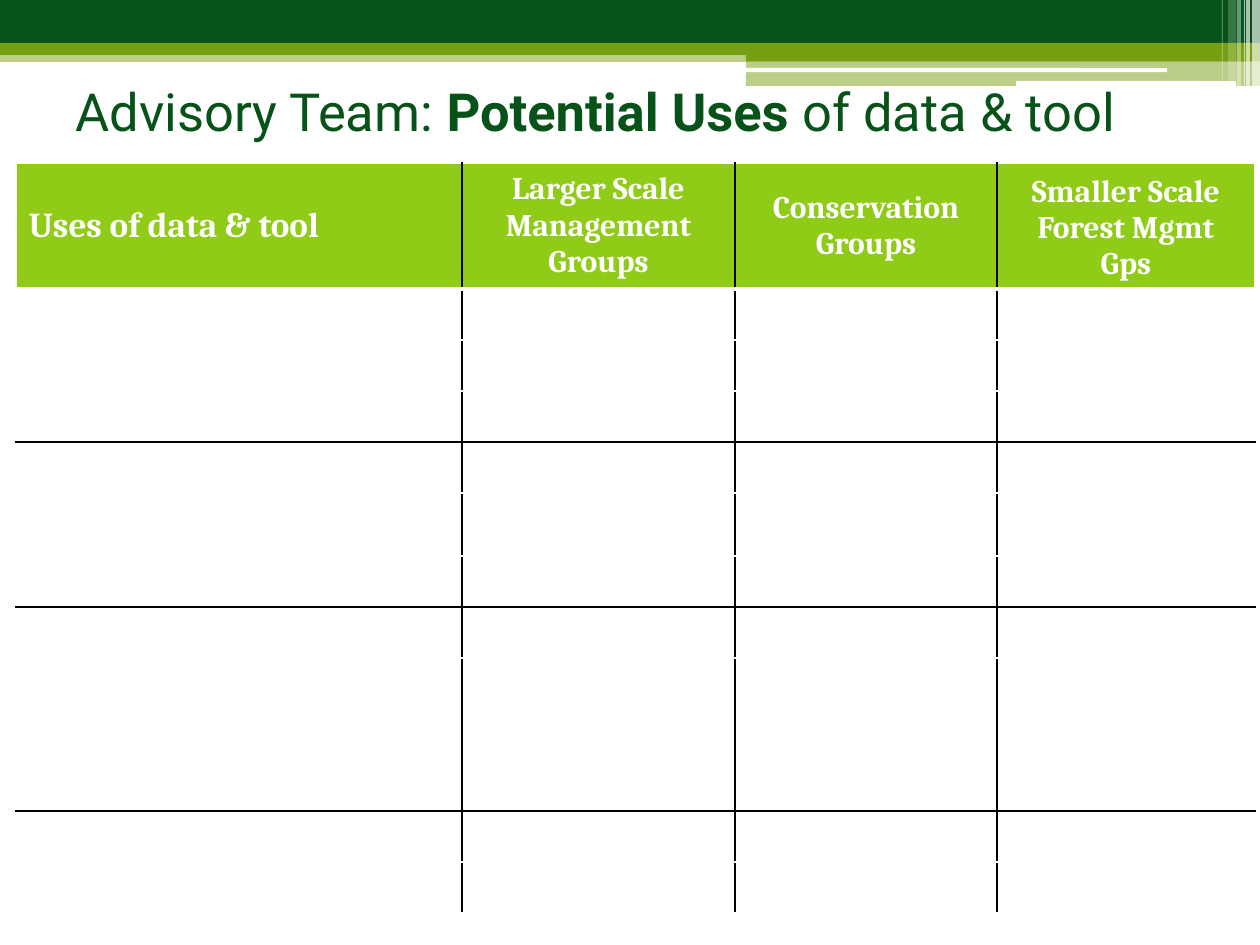
from dataclasses import dataclass
from typing import Optional

import lxml.etree
import pptx
import pptx.dml.color
import pptx.enum.shapes
import pptx.enum.text
import pptx.oxml.ns
import pptx.util

EMU_PER_PX = 914400 / 126
RECT = pptx.enum.shapes.MSO_SHAPE.RECTANGLE
ROUNDED = pptx.enum.shapes.MSO_SHAPE.ROUNDED_RECTANGLE
ALIGN = pptx.enum.text.PP_ALIGN
ANCHOR = pptx.enum.text.MSO_ANCHOR


@dataclass(frozen=True)
class Theme:
    forest: str = "065218"
    olive: str = "769F11"
    lime: str = "8FCB17"
    white: str = "FFFFFF"
    black: str = "000000"
    title_font: str = "Roboto"
    table_font: str = "Cambria"
    title_size: int = 30
    first_heading_size: int = 20
    heading_size: int = 18
    rule: int = 1
    heading_rule: int = 3


@dataclass(frozen=True)
class Band:
    left: int
    top: int
    width: int
    height: int
    color: str
    opacity: int = 100
    preset: pptx.enum.shapes.MSO_SHAPE = RECT


@dataclass(frozen=True)
class Column:
    heading: str
    width: int
    size: int
    align: ALIGN = ALIGN.CENTER
    anchor: ANCHOR = ANCHOR.MIDDLE


@dataclass(frozen=True)
class Rule:
    color: str
    width: int


THEME = Theme()
BANDS = [
    Band(0, 50, 1260, 12, THEME.olive, 50),
    Band(0, 0, 1260, 43, THEME.forest),
    Band(0, 43, 1260, 12, THEME.olive),
    Band(746, 49, 514, 12, THEME.olive),
    Band(746, 61, 514, 25, THEME.olive, 50),
    Band(745, 68, 422, 4, THEME.white, preset=ROUNDED),
    Band(1016, 81, 220, 5, THEME.white, preset=ROUNDED),
    Band(1252, 0, 8, 86, THEME.white, 65),
    Band(1246, 0, 4, 86, THEME.white, 65),
    Band(1244, 0, 1, 86, THEME.white, 60),
    Band(1237, 0, 4, 86, THEME.white, 40),
    Band(1228, 0, 8, 81, THEME.white, 20),
    Band(1222, 0, 1, 81, THEME.white, 30),
]
COLUMNS = [
    Column("Uses of data & tool", 446, THEME.first_heading_size, ALIGN.LEFT),
    Column("Larger Scale Management Groups", 273, THEME.heading_size),
    Column("Conservation Groups", 262, THEME.heading_size),
    Column("Smaller Scale Forest Mgmt Gps", 258, THEME.heading_size, anchor=ANCHOR.BOTTOM),
]
ROW_HEIGHTS = [118] + [51] * 4 + [63] + [51] * 7
GROUP_ENDS = {3, 6, 10}
UNRULED_ROWS = {8, 9}
TITLE = [("Advisory Team: ", False), ("Potential Uses ", True), ("of data & tool", False)]


def px(length: int) -> pptx.util.Emu:
    return pptx.util.Emu(round(length * EMU_PER_PX))


def rgb(color: str) -> pptx.dml.color.RGBColor:
    return pptx.dml.color.RGBColor.from_string(color)


def style_run(run, font: str, size: int, color: str, bold: bool) -> None:
    run.font.name = font
    run.font.size = pptx.util.Pt(size)
    run.font.color.rgb = rgb(color)
    run.font.bold = bold


def draw_band(slide, band: Band) -> None:
    strip = slide.shapes.add_shape(
        band.preset, px(band.left), px(band.top), px(band.width), px(band.height))
    strip.shadow.inherit = False
    strip.line.fill.background()
    strip.fill.solid()
    strip.fill.fore_color.rgb = rgb(band.color)
    if band.opacity < 100:
        color = strip.fill._xPr.find(".//" + pptx.oxml.ns.qn("a:srgbClr"))
        lxml.etree.SubElement(
            color, pptx.oxml.ns.qn("a:alpha"), val=str(band.opacity * 1000))


def draw_title(slide) -> None:
    title = slide.shapes.add_textbox(px(63), px(58), px(1134), px(104))
    title.text_frame.word_wrap = True
    title.text_frame.vertical_anchor = ANCHOR.MIDDLE
    for words, bold in TITLE:
        run = title.text_frame.paragraphs[0].add_run()
        run.text = words
        style_run(run, THEME.title_font, THEME.title_size, THEME.forest, bold)


def draw_border(cell, side: str, rule: Optional[Rule]) -> None:
    qn = pptx.oxml.ns.qn
    border = lxml.etree.SubElement(cell._tc.get_or_add_tcPr(), qn(f"a:ln{side}"))
    if rule is None:
        lxml.etree.SubElement(border, qn("a:noFill"))
        return
    border.set("w", str(pptx.util.Pt(rule.width)))
    fill = lxml.etree.SubElement(border, qn("a:solidFill"))
    lxml.etree.SubElement(fill, qn("a:srgbClr"), val=rule.color)


def vertical_rule(edge: int) -> Rule:
    inner = 0 < edge < len(COLUMNS)
    return Rule(THEME.black if inner else THEME.white, THEME.rule)


def rule_below(row: int) -> Optional[Rule]:
    if row in UNRULED_ROWS:
        return None
    if row == 0:
        return Rule(THEME.white, THEME.heading_rule)
    return Rule(THEME.black if row in GROUP_ENDS else THEME.white, THEME.rule)


def draw_cell(cell, row: int, position: int) -> None:
    borders = {
        "L": vertical_rule(position),
        "R": vertical_rule(position + 1),
        "T": rule_below(row - 1),
        "B": rule_below(row),
    }
    for side, rule in borders.items():
        draw_border(cell, side, rule)
    cell.fill.solid()
    cell.fill.fore_color.rgb = rgb(THEME.white if row else THEME.lime)


def draw_heading(cell, column: Column) -> None:
    cell.text_frame.text = column.heading
    cell.vertical_anchor = column.anchor
    heading = cell.text_frame.paragraphs[0]
    heading.alignment = column.align
    style_run(heading.runs[0], THEME.table_font, column.size, THEME.white, True)


def draw_uses_table(slide) -> None:
    uses = slide.shapes.add_table(
        len(ROW_HEIGHTS), len(COLUMNS), px(16), px(163),
        px(sum(column.width for column in COLUMNS)), px(sum(ROW_HEIGHTS))).table
    uses.first_row = False
    uses.horz_banding = False
    for row, height in enumerate(ROW_HEIGHTS):
        uses.rows[row].height = px(height)
        for position in range(len(COLUMNS)):
            draw_cell(uses.cell(row, position), row, position)
    for position, column in enumerate(COLUMNS):
        uses.columns[position].width = px(column.width)
        draw_heading(uses.cell(0, position), column)


def main() -> None:
    deck = pptx.Presentation()
    deck.slide_width = px(1260)
    deck.slide_height = px(945)
    slide = deck.slides.add_slide(deck.slide_layouts[6])
    for band in BANDS:
        draw_band(slide, band)
    draw_title(slide)
    draw_uses_table(slide)
    deck.save("out.pptx")


if __name__ == "__main__":
    main()
